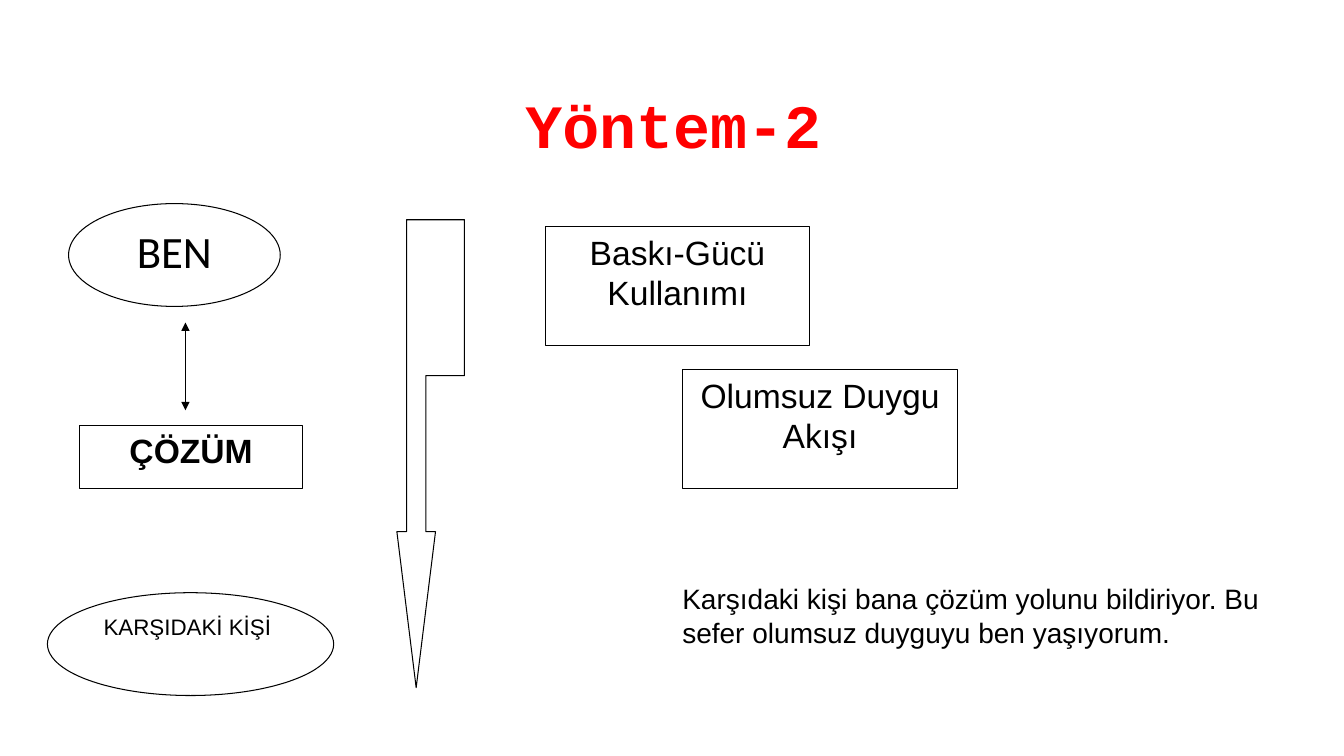
from lxml import etree
from pptx import Presentation
from pptx import util as u
from pptx.dml import color
from pptx.enum import shapes, text
from pptx.oxml import ns

COLORS = {"ink": "000000", "paper": "FFFFFF", "accent": "FF0000"}


class Board:
    def __init__(self, presentation):
        self.width = presentation.slide_width
        self.height = presentation.slide_height
        self.slide = presentation.slides.add_slide(presentation.slide_layouts[6])
        self.shapes = self.slide.shapes
        self.font = {"name": "Arial", "size": u.Pt(24), "bold": False}

    def x(self, percent):
        return round(self.width * percent / 100)

    def y(self, percent):
        return round(self.height * percent / 100)

    def place(self, left, top, width, height):
        return self.x(left), self.y(top), self.x(width), self.y(height)

    def rgb(self, name):
        return color.RGBColor.from_string(COLORS[name])

    def outline(self, line):
        line.color.rgb = self.rgb("ink")
        line.width = u.Pt(0.75)

    def paint(self, shape):
        shape.shadow.inherit = False
        shape.fill.solid()
        shape.fill.fore_color.rgb = self.rgb("paper")
        self.outline(shape.line)

    def set_words(self, shape, words, align="CENTER", anchor="TOP", ink="ink", **changes):
        frame = shape.text_frame
        frame.word_wrap = True
        frame.vertical_anchor = text.MSO_ANCHOR[anchor]
        paragraph = frame.paragraphs[0]
        paragraph.alignment = text.PP_ALIGN[align]
        run = paragraph.add_run()
        run.text = words
        for key, value in {**self.font, **changes}.items():
            setattr(run.font, key, value)
        run.font.color.rgb = self.rgb(ink)

    def label(self, area, words, **style):
        self.set_words(self.shapes.add_textbox(*self.place(*area)), words, **style)

    def node(self, kind, area, words, **style):
        shape = self.shapes.add_shape(shapes.MSO_SHAPE[kind], *self.place(*area))
        self.paint(shape)
        self.set_words(shape, words, **style)

    def double_arrow(self, left, top, bottom):
        connector = self.shapes.add_connector(
            shapes.MSO_CONNECTOR.STRAIGHT,
            self.x(left), self.y(top), self.x(left), self.y(bottom))
        self.outline(connector.line)
        properties = connector._element.spPr
        line = properties.find(ns.qn("a:ln"))
        for end in ("a:headEnd", "a:tailEnd"):
            etree.SubElement(line, ns.qn(end), type="triangle")
        etree.SubElement(properties, ns.qn("a:effectLst"))

    def outline_shape(self, area, columns, rows, points):
        left, top, width, height = self.place(*area)
        corners = [(left + width * column // columns, top + height * row // rows)
                   for column, row in points]
        builder = self.shapes.build_freeform(*corners[0])
        builder.add_line_segments(corners[1:], close=True)
        self.paint(builder.convert_to_shape())


def main():
    presentation = Presentation()
    presentation.slide_width = u.Inches(13.33)
    presentation.slide_height = u.Inches(7.5)
    board = Board(presentation)

    board.label((5.1, 8, 90, 16.67), "Yöntem-2", anchor="MIDDLE", ink="accent",
                name="Courier New", size=u.Pt(44), bold=True)
    board.node("OVAL", (5.1, 26.93, 15.75, 13.6), "BEN",
               name="Calibri", size=u.Pt(32))
    board.double_arrow(13.8, 42.67, 54.27)
    board.node("RECTANGLE", (5.93, 56.27, 16.58, 8.4), "ÇÖZÜM", bold=True)
    board.node("OVAL", (3.53, 78.4, 21.3, 13.6), "KARŞIDAKİ KİŞİ ", size=u.Pt(16))
    board.node("RECTANGLE", (40.58, 30, 19.65, 15.73), "Baskı-Gücü Kullanımı")
    board.node("RECTANGLE", (50.78, 48.93, 20.48, 15.73), "Olumsuz Duygu Akışı")
    board.label((50.03, 76.27, 45.68, 14.8),
                "Karşıdaki kişi bana çözüm yolunu bildiriyor. "
                "Bu sefer olumsuz duyguyu ben yaşıyorum.",
                align="LEFT", size=u.Pt(20))
    board.outline_shape((29.53, 29.07, 5.03, 61.9), 7, 3,
                        [(2, 3), (4, 2), (3, 2), (3, 1), (7, 1),
                         (7, 0), (1, 0), (1, 2), (0, 2)])
    presentation.save("out.pptx")


if __name__ == "__main__":
    main()
